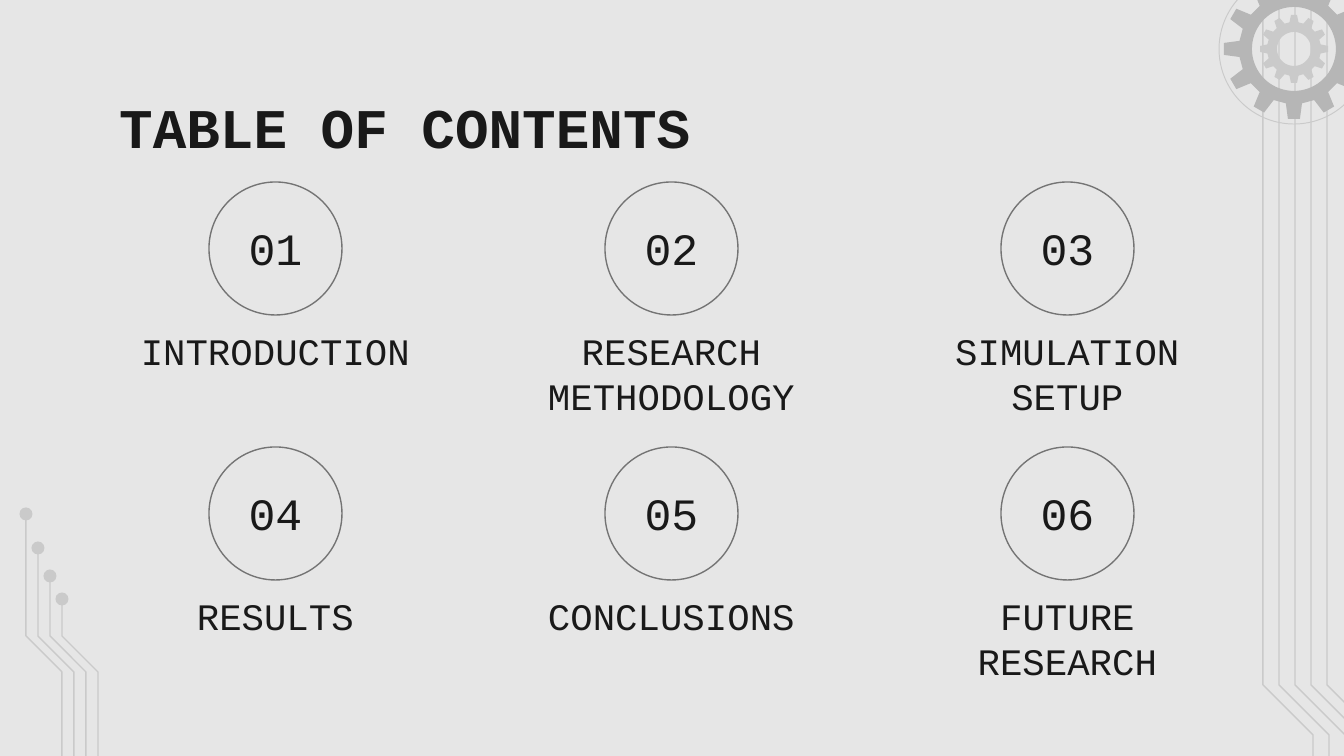
from dataclasses import dataclass
from math import cos, hypot, pi, sin

from lxml.etree import SubElement
from pptx import Presentation
from pptx.dml.color import RGBColor
from pptx.enum.shapes import MSO_SHAPE
from pptx.enum.text import MSO_ANCHOR, PP_ALIGN
from pptx.oxml.ns import qn
from pptx.util import Emu, Pt

SLIDE_WIDTH, SLIDE_HEIGHT = 1344, 756
EMU_PER_PX = 9144000 / SLIDE_WIDTH


@dataclass(frozen=True)
class Theme:
    font: str = "Courier New"
    background: RGBColor = RGBColor(0xE6, 0xE6, 0xE6)
    text: RGBColor = RGBColor(0x19, 0x19, 0x19)
    outline: RGBColor = RGBColor(0x74, 0x74, 0x74)
    light: RGBColor = RGBColor(0xCA, 0xCA, 0xCA)
    gear: RGBColor = RGBColor(0xB6, 0xB6, 0xB6)
    title_size: int = 30
    number_size: int = 24
    caption_size: int = 20


THEME = Theme()
SECTIONS = [
    "INTRODUCTION", "RESEARCH METHODOLOGY", "SIMULATION SETUP",
    "RESULTS", "CONCLUSIONS", "FUTURE\nRESEARCH",
]


def px(length):
    return Emu(round(length * EMU_PER_PX))


def paint(shape, fill=None, line=None, width=0.75):
    shape.shadow.inherit = False
    if fill is None:
        shape.fill.background()
    else:
        shape.fill.solid()
        shape.fill.fore_color.rgb = fill
    if line is None:
        shape.line.fill.background()
    else:
        shape.line.color.rgb = line
        shape.line.width = Pt(width)


def add_circle(slide, center_x, center_y, radius, **colors):
    shape = slide.shapes.add_shape(
        MSO_SHAPE.OVAL, px(center_x - radius), px(center_y - radius),
        px(2 * radius), px(2 * radius))
    paint(shape, **colors)


def add_outline(slide, contours, closed, **colors):
    contours = [[(px(x), px(y)) for x, y in contour] for contour in contours]
    builder = slide.shapes.build_freeform(*contours[0][0])
    for index, contour in enumerate(contours):
        if index:
            builder.move_to(*contour[0])
        builder.add_line_segments(contour[1:], close=closed)
    paint(builder.convert_to_shape(), **colors)


def add_text(slide, box, text, size, bold=False, align=PP_ALIGN.CENTER,
             anchor=MSO_ANCHOR.TOP):
    text_frame = slide.shapes.add_textbox(*map(px, box)).text_frame
    text_frame.word_wrap = True
    text_frame.vertical_anchor = anchor
    text_frame.margin_left = text_frame.margin_right = Pt(7.2)
    text_frame.margin_top = text_frame.margin_bottom = Pt(7.2)
    text_frame.text = text
    for paragraph in text_frame.paragraphs:
        paragraph.alignment = align
        for run in paragraph.runs:
            run.font.name = THEME.font
            run.font.size = Pt(size)
            run.font.bold = bold
            run.font.color.rgb = THEME.text
            for tag in ("a:ea", "a:cs"):
                SubElement(run.font._element, qn(tag), typeface=THEME.font)


def add_right_traces(slide, left, top, count=5, pitch=16):
    # Each step is a horizontal and a vertical move along the trace
    steps = [(0, 721), (50, 50), (0, 216), (-112, 112), (0, 272)]
    for index in range(count):
        points = [(left + index * pitch, top)]
        for step_x, step_y in steps:
            x, y = points[-1]
            points.append((x + step_x, y + step_y))
        add_outline(slide, [points], closed=False, line=THEME.light)


def add_left_traces(slide, left, top, pitch=12, bend=36):
    traces = [(0, 245), (34, 255), (62, 267), (85, 280)]
    bend_top = top + 122
    for index, (start, end) in enumerate(traces):
        x = left + index * pitch
        points = [(x, top + start), (x, bend_top),
                  (x + bend, bend_top + bend), (x + bend, top + end)]
        add_outline(slide, [points], closed=False, line=THEME.light)
        add_circle(slide, x, top + start, 6.5, fill=THEME.light)


def add_gear(slide, center_x, center_y, tip, root, hole, tip_half, root_half,
             color, teeth=12):
    def place(radius, angle):
        return center_x + radius * cos(angle), center_y + radius * sin(angle)

    # Corners of one tooth: distance along its axis and across it
    root_depth = (root ** 2 - root_half ** 2) ** 0.5
    corners = [(root_depth, -root_half), (tip, -tip_half),
               (tip, tip_half), (root_depth, root_half)]
    rim = [place(hypot(along, across), 2 * pi * tooth / teeth + across / along)
           for tooth in range(teeth) for along, across in corners]
    bore = [place(hole, -2 * pi * step / 72) for step in range(72)]
    add_outline(slide, [bore, rim], closed=True, fill=color)


def add_gears(slide, left, top, size):
    center_x, center_y = left + size / 2, top + size / 2
    add_gear(slide, center_x, center_y, 34, 27, 17, 3, 4.5, THEME.light)
    add_gear(slide, center_x, center_y, 70, 55, 42, 6, 8, THEME.gear)
    add_circle(slide, center_x, center_y, size / 2, line=THEME.light, width=0.5)


def add_section(slide, left, top, width, number, caption):
    diameter = 133
    circle_left = left + (width - diameter) / 2
    add_circle(slide, left + width / 2, top + diameter / 2, diameter / 2,
               line=THEME.outline)
    add_text(slide, (circle_left, top + 28, diameter, 78), f"{number:02}",
             THEME.number_size, anchor=MSO_ANCHOR.BOTTOM)
    add_text(slide, (left, top + diameter, width, 112), caption,
             THEME.caption_size)


def add_sections(slide, left, top, columns=3, column_pitch=396, row_pitch=265):
    for index, caption in enumerate(SECTIONS):
        row, column = divmod(index, columns)
        add_section(slide, left + column * column_pitch, top + row * row_pitch,
                    341, index + 1, caption)


def main():
    presentation = Presentation()
    presentation.slide_width = px(SLIDE_WIDTH)
    presentation.slide_height = px(SLIDE_HEIGHT)
    slide = presentation.slides.add_slide(presentation.slide_layouts[6])
    slide.background.fill.solid()
    slide.background.fill.fore_color.rgb = THEME.background

    # Decoration
    add_right_traces(slide, 1263, -36)
    add_left_traces(slide, 26, 514)
    add_gears(slide, 1219, -26, 150)

    # Contents
    add_text(slide, (106, 79, 1133, 84), "TABLE OF CONTENTS",
             THEME.title_size, bold=True, align=PP_ALIGN.LEFT)
    add_sections(slide, 105, 182)
    presentation.save("out.pptx")


if __name__ == "__main__":
    main()
